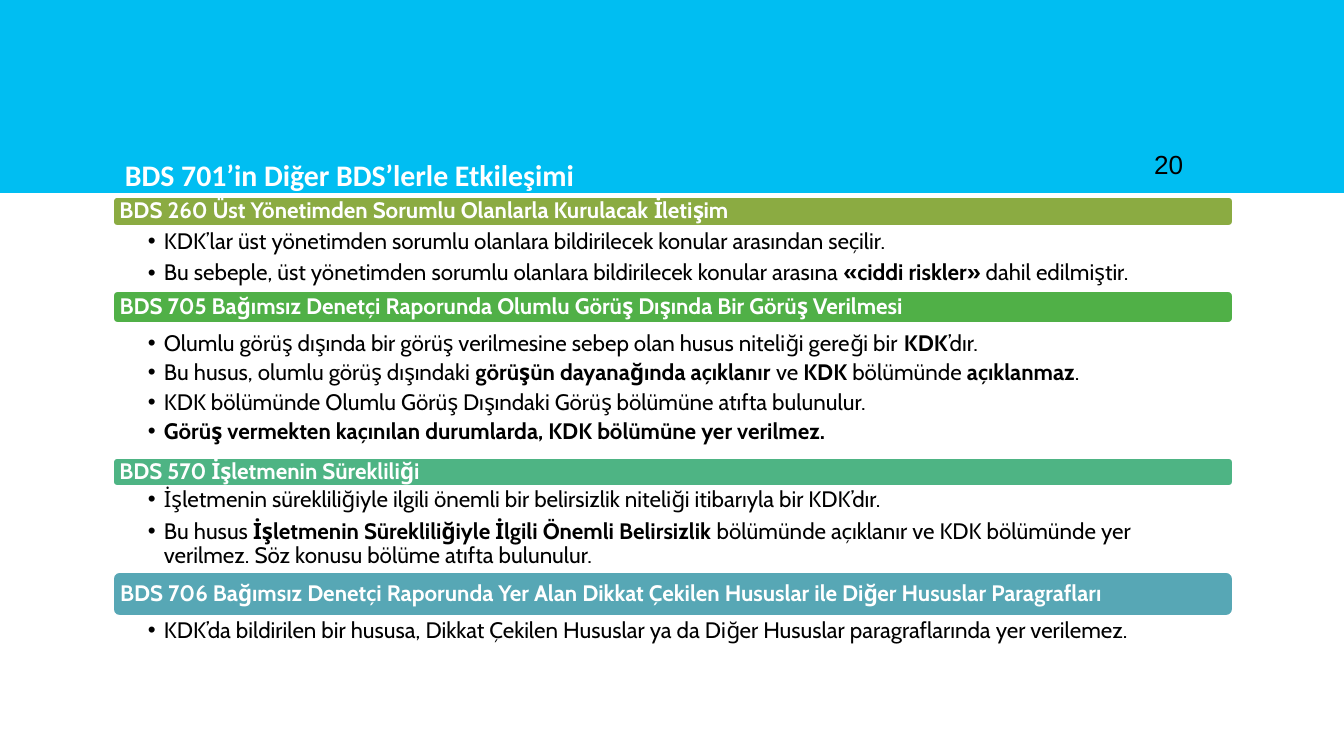
from dataclasses import dataclass

from lxml.etree import SubElement
from pptx import Presentation
from pptx.dml.color import RGBColor as Rgb
from pptx.enum.shapes import MSO_SHAPE as Form
from pptx.enum.text import MSO_ANCHOR as Anchor
from pptx.oxml.ns import qn
from pptx.util import Emu, Pt


@dataclass(frozen=True)
class Theme:
    """Colours, fonts and type sizes of the slide."""
    band: str = "00BEF2"
    white: str = "FFFFFF"
    black: str = "000000"
    bars: tuple = ("8BAB42", "50B047", "4EB484", "57A7B5")
    main: str = "Cabin"
    head: str = "Calibri"
    plain: str = "Arial"
    body: int = 12
    title: int = 16
    number: int = 14


LEFT, WIDE = 112, 1122
LOOSE, TIGHT = 4, 2.8
PARTS = [
    (196, 31, 227, 69, LOOSE,
     "BDS 260 Üst Yönetimden Sorumlu Olanlarla Kurulacak İletişim",
     ["KDK’lar üst yönetimden sorumlu olanlara bildirilecek konular arasından seçilir.",
      "Bu sebeple, üst yönetimden sorumlu olanlara bildirilecek konular arasına "
      "*«ciddi riskler» *dahil edilmiştir."]),
    (290, 34, 329, 124, TIGHT,
     "BDS 705 Bağımsız Denetçi Raporunda Olumlu Görüş Dışında Bir Görüş Verilmesi",
     ["Olumlu görüş dışında bir görüş verilmesine sebep olan husus niteliği gereği bir *KDK*’dır.",
      "Bu husus, olumlu görüş dışındaki *görüşün dayanağında açıklanır *ve *KDK* "
      "bölümünde *açıklanmaz*.",
      "KDK bölümünde Olumlu Görüş Dışındaki Görüş bölümüne atıfta bulunulur.",
      "*Görüş vermekten kaçınılan durumlarda, KDK bölümüne yer verilmez.*"]),
    (457, 30, 485, 90, LOOSE,
     "BDS 570 İşletmenin Sürekliliği",
     ["İşletmenin sürekliliğiyle ilgili önemli bir belirsizlik niteliği itibarıyla bir KDK’dır.",
      "Bu husus *İşletmenin Sürekliliğiyle İlgili Önemli Belirsizlik *bölümünde açıklanır "
      "ve KDK bölümünde yer verilmez. Söz konusu bölüme atıfta bulunulur."]),
    (571, 46, 616, 69, TIGHT,
     "BDS 706 Bağımsız Denetçi Raporunda Yer Alan Dikkat Çekilen Hususlar ile "
     "Diğer Hususlar Paragrafları",
     ["KDK’da bildirilen bir hususa, Dikkat Çekilen Hususlar ya da Diğer Hususlar "
      "paragraflarında yer verilemez."]),
]


def px(num):
    """Turn whole pixels into EMU."""
    return Emu(round(num * 914400 / 134.4))


class Deck:
    """Holds the theme and the current slide."""

    def __init__(self, theme, wide, high):
        """Open a file with one blank slide."""
        self.theme = theme
        self.file = Presentation()
        self.file.slide_width, self.file.slide_height = px(wide), px(high)
        self.slide = self.file.slides.add_slide(self.file.slide_layouts[6])

    def shape(self, form, spot, fill):
        """Draw a filled preset shape without line or shadow."""
        item = self.slide.shapes.add_shape(form, *map(px, spot))
        item.shadow.inherit = False
        item.fill.solid()
        item.fill.fore_color.rgb = Rgb.from_string(fill)
        item.line.fill.background()
        return item

    def frame(self, item, pads, anchor):
        """Set wrap, insets and anchor of a shape's text."""
        frame = item.text_frame
        frame.word_wrap = True
        frame.margin_left, frame.margin_top, frame.margin_right, frame.margin_bottom = map(px, pads)
        frame.vertical_anchor = anchor
        return frame

    def style(self, font, face, size, color, bold=False):
        """Set the look of a font."""
        font.name, font.size, font.bold = face, Pt(size), bold
        font.color.rgb = Rgb.from_string(color)

    def label(self, spot, text, pads, *look):
        """Place one line at the foot of a text box."""
        box = self.slide.shapes.add_textbox(*map(px, spot))
        frame = self.frame(box, pads, Anchor.BOTTOM)
        frame.text = text
        self.style(frame.paragraphs[0].runs[0].font, *look)

    def bar(self, spot, text, fill):
        """Draw a rounded section heading."""
        theme = self.theme
        item = self.shape(Form.ROUNDED_RECTANGLE, spot, fill)
        item.line.color.rgb = Rgb.from_string(theme.white)
        item.line.width = Pt(2)
        frame = self.frame(item, (6, 0, 6, 0), Anchor.MIDDLE)
        frame.text = text
        para = frame.paragraphs[0]
        para.alignment = 1
        para.line_spacing = 0.9
        self.style(para.runs[0].font, theme.main, theme.body, theme.white, True)

    def points(self, spot, lines, gap):
        """Write bullets, with bold between asterisks."""
        theme = self.theme
        box = self.slide.shapes.add_textbox(*map(px, spot))
        frame = self.frame(box, (36, 3, 12, 3), Anchor.TOP)
        for row, line in enumerate(lines):
            para = frame.add_paragraph() if row else frame.paragraphs[0]
            para.line_spacing, para.space_after = 0.9, Pt(gap)
            props = para._p.get_or_add_pPr()
            props.set("marL", str(px(16)))
            props.set("indent", str(-px(16)))
            SubElement(props, qn("a:buFont"), typeface=theme.plain)
            SubElement(props, qn("a:buChar"), char="•")
            for turn, text in enumerate(line.split("*")):
                if text:
                    run = para.add_run()
                    run.text = text
                    self.style(run.font, theme.main, theme.body, theme.black, turn % 2 == 1)


def main():
    """Build and save the slide."""
    theme = Theme()
    deck = Deck(theme, 1344, 756)
    deck.shape(Form.RECTANGLE, (0, 0, 1344, 193), theme.band)
    for fill, (top, high, low, deep, gap, head, lines) in zip(theme.bars, PARTS):
        deck.bar((LEFT, top, WIDE, high), head, fill)
        deck.points((LEFT, low, WIDE, deep), lines, gap)
    deck.label((LEFT, 130, 1048, 98), "BDS 701’in Diğer BDS’lerle Etkileşimi",
               (13, 13, 13, 48), theme.head, theme.title, theme.white, True)
    deck.label((1141, 95, 81, 98), "20", (13, 13, 13, 13),
               theme.plain, theme.number, theme.black)
    deck.file.save("out.pptx")


if __name__ == "__main__":
    main()
